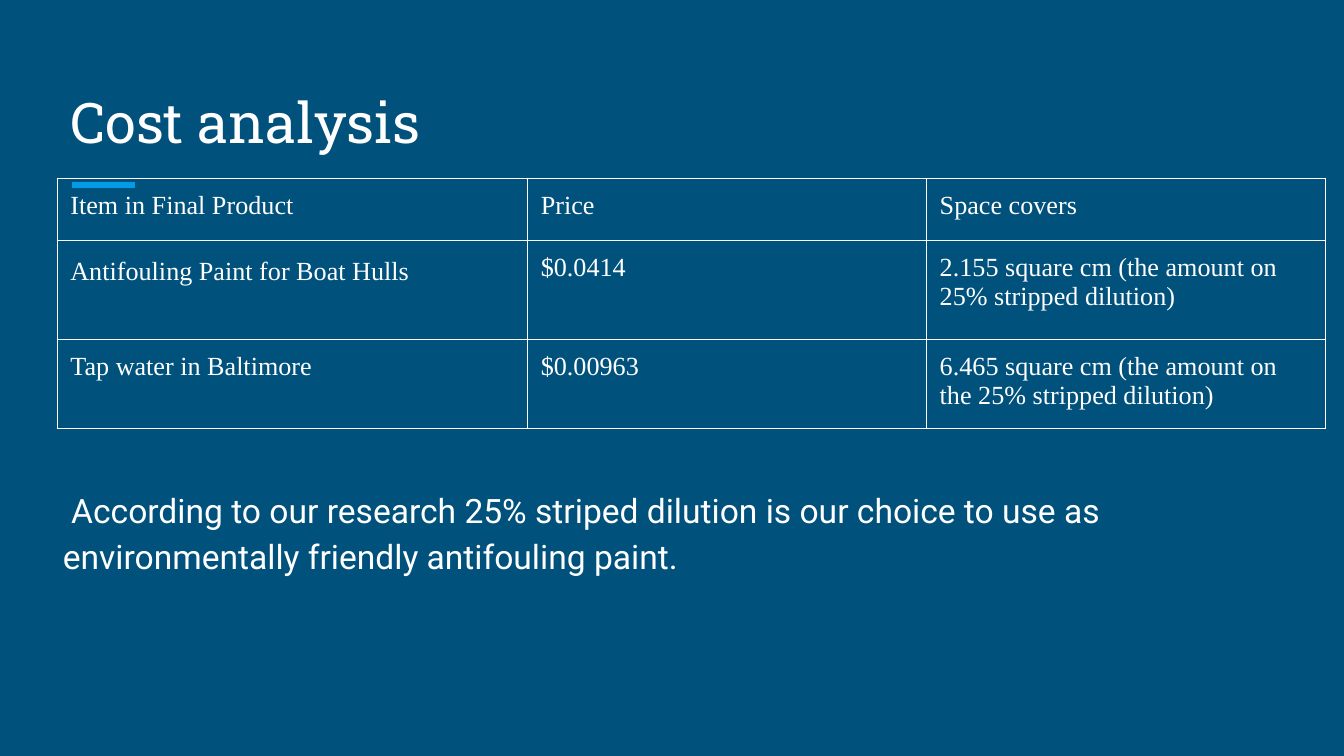
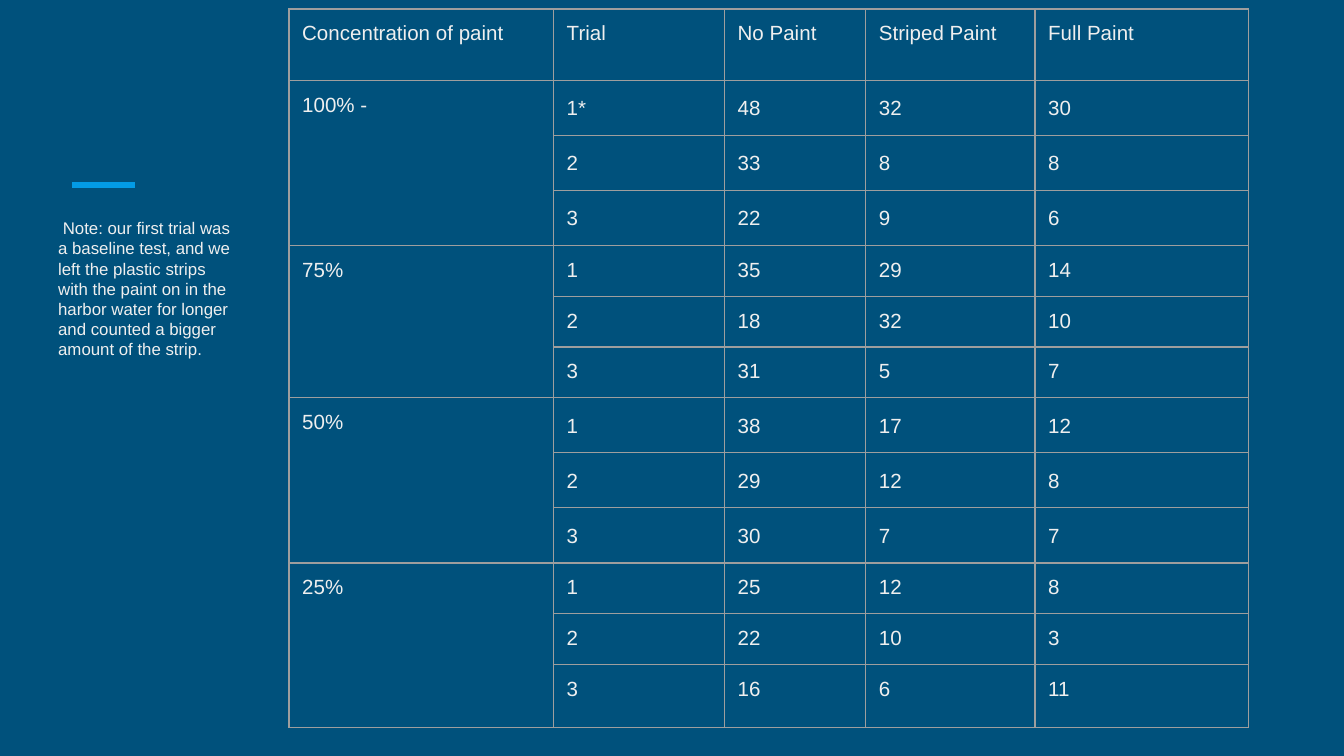
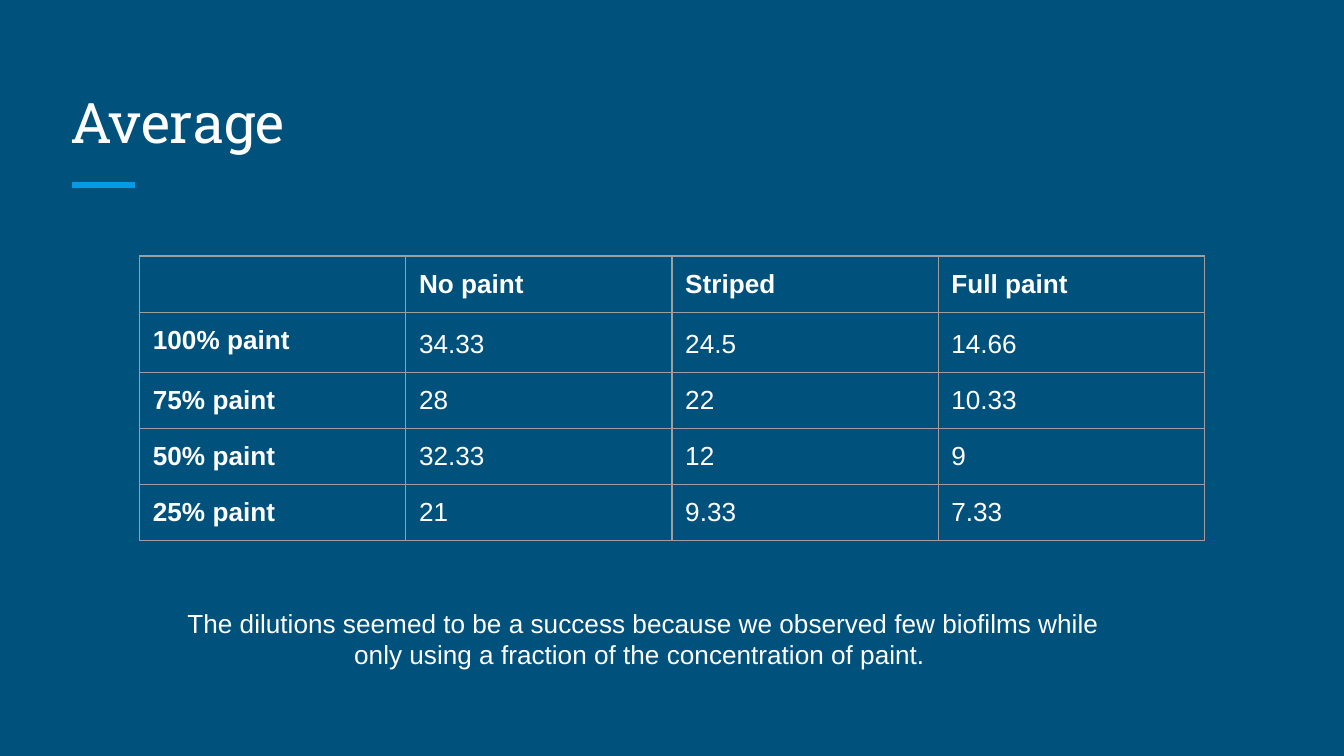
"""Build three slides on the cost and test results of an antifouling paint."""
import lxml.etree as etree
import pptx
import pptx.dml.color
import pptx.enum.shapes
import pptx.enum.text
import pptx.oxml.ns
import pptx.util

Cm, Pt = pptx.util.Cm, pptx.util.Pt
qn = pptx.oxml.ns.qn
PP_ALIGN = pptx.enum.text.PP_ALIGN
ANCHOR = pptx.enum.text.MSO_ANCHOR
COLORS = {key: pptx.dml.color.RGBColor.from_string(value) for key, value in {
    "background": "00517C", "accent": "039BE5", "white": "FFFFFF",
    "light": "EFEFEF", "grid": "9E9E9E"}.items()}
INSET = Cm(0.25)


def write(tf, text, font, size, color="white", bold=False, spacing=None, after=None,
          align=PP_ALIGN.LEFT):
    """Fill a text frame with one formatted paragraph and return it."""
    tf.word_wrap = True
    tf.margin_left = tf.margin_right = tf.margin_top = tf.margin_bottom = INSET
    p = tf.paragraphs[0]
    p.alignment = align
    if spacing:
        p.line_spacing = spacing
    if after:
        p.space_after = Pt(after)
    if text:
        p.text = text
    else:
        etree.SubElement(p._p, qn("a:endParaRPr"), sz=str(size * 100))
    p.font.name, p.font.size, p.font.bold = font, Pt(size), bold
    p.font.color.rgb = COLORS[color]
    return p


def add_grid(s, left, top, widths, heights, rows, font, size, color="white",
             border="grid", loose=(), bold_heads=False):
    """Add an unfilled table with thin borders; loose cells get wider line spacing."""
    table = s.shapes.add_table(len(heights), len(widths), Cm(left), Cm(top),
                               Cm(sum(widths)), Cm(sum(heights))).table
    table.first_row = table.horz_banding = False
    for column, width in zip(table.columns, widths):
        column.width = Cm(width)
    for row, height in zip(table.rows, heights):
        row.height = Cm(height)
    for i, row in enumerate(rows):
        for j, text in enumerate(row):
            cell = table.cell(i, j)
            cell.margin_left = cell.margin_right = INSET
            cell.margin_top = cell.margin_bottom = INSET
            tcPr = cell._tc.get_or_add_tcPr()
            for side in ("a:lnL", "a:lnR", "a:lnT", "a:lnB"):
                ln = etree.SubElement(tcPr, qn(side), w=str(Pt(0.75)))
                fill = etree.SubElement(ln, qn("a:solidFill"))
                etree.SubElement(fill, qn("a:srgbClr"), val=str(COLORS[border]))
            cell.fill.background()
            write(cell.text_frame, text, font, size, color,
                  bold=bold_heads and (i == 0 or j == 0),
                  spacing=1.15 if (i, j) in loose else None)
    return table


prs = pptx.Presentation()
prs.slide_width, prs.slide_height = Cm(25.4), Cm(14.29)
fill = prs.slide_master.background.fill
fill.solid()
fill.fore_color.rgb = COLORS["background"]

slides = []
for title in ("Cost analysis", None, "Average"):
    s = prs.slides.add_slide(prs.slide_layouts[5 if title else 6])
    if title:
        sp = s.shapes.title
        sp.left, sp.top, sp.width, sp.height = Cm(1.08), Cm(1.27), Cm(23.24), Cm(1.9)
        sp.text_frame.auto_size = pptx.enum.text.MSO_AUTO_SIZE.NONE
        sp.text_frame.vertical_anchor = ANCHOR.BOTTOM
        write(sp.text_frame, title, "Roboto Slab", 30)
    accent = s.shapes.add_connector(pptx.enum.shapes.MSO_CONNECTOR.STRAIGHT,
                                    Cm(1.37), Cm(3.5), Cm(2.55), Cm(3.5))
    accent.line.color.rgb = COLORS["accent"]
    accent.line.width = Pt(3)
    etree.SubElement(accent._element.spPr, qn("a:effectLst"))
    slides.append(s)
cost, trials, average = slides

sp = cost.shapes.add_textbox(Cm(0.94), Cm(8.89), Cm(23.52), Cm(2.16))
write(sp.text_frame, " According to our research 25% striped dilution is our choice to use as "
      "environmentally friendly antifouling paint.", "Roboto", 18, spacing=1.15, after=16)
costs = [
    ["Item in Final Product", "Price", "Space covers"],
    ["Antifouling Paint for Boat Hulls", "$0.0414",
     "2.155 square cm (the amount on 25% stripped dilution)"],
    ["Tap water in Baltimore", "$0.00963",
     "6.465 square cm (the amount on the 25% stripped dilution)"],
]
table = add_grid(cost, 1.08, 3.37, [8.89, 7.54, 7.54], [1.17, 1.87, 1.6], costs,
                 "Times New Roman", 14, border="white", loose={(1, 0)})
table.cell(1, 0).text_frame.paragraphs[0].space_after = Pt(16)

counts = {
    "100% -": [(48, 32, 30), (33, 8, 8), (22, 9, 6)],
    "75%": [(35, 29, 14), (18, 32, 10), (31, 5, 7)],
    "50%": [(38, 17, 12), (29, 12, 8), (30, 7, 7)],
    "25%": [(25, 12, 8), (22, 10, 3), (16, 6, 11)],
}
rows = [["Concentration of paint", "Trial", "No Paint", "Striped Paint", "Full Paint"]]
for concentration, results in counts.items():
    for n, result in enumerate(results, 1):
        trial = "1*" if concentration == "100% -" and n == 1 else str(n)
        rows.append([concentration if n == 1 else "", trial, *map(str, result)])
loose = {(i, j) for i in (1, 2, 3, 7, 8, 9) for j in range(1, 5)}
heights = [1.35] + ([1.04] * 3 + [0.96] * 3) * 2
heights[-1] = 1.19
table = add_grid(trials, 5.46, 0.17, [5, 3.23, 2.67, 3.2, 4.04], heights, rows,
                 "Arial", 11, "light", loose=loose)
for i in range(1, 13, 3):
    table.cell(i, 0).merge(table.cell(i + 2, 0))
sp = trials.shapes.add_textbox(Cm(0.85), Cm(3.87), Cm(3.9), Cm(5.31))
write(sp.text_frame, " Note: our first trial was a baseline test, and we left the plastic strips "
      "with the paint on in the harbor water for longer and counted a bigger amount of the strip.",
      "Arial", 9, "light")

averages = [
    ["", "No paint", "Striped", "Full paint"],
    ["100% paint", "34.33", "24.5", "14.66"],
    ["75% paint", "28", "22", "10.33"],
    ["50% paint", "32.33", "12", "9"],
    ["25% paint", "21", "9.33", "7.33"],
]
add_grid(average, 2.64, 4.84, [5.03] * 4, [1.06] * 5, averages, "Arial", 14,
         loose={(1, j) for j in range(1, 4)}, bold_heads=True)
sp = average.shapes.add_textbox(Cm(2.9), Cm(11.23), Cm(18.52), Cm(2.29))
write(sp.text_frame, "The dilutions seemed to be a success because we observed few biofilms while "
      "only using a fraction of the concentration of paint. ", "Arial", 14, align=PP_ALIGN.CENTER)

prs.save("out.pptx")
